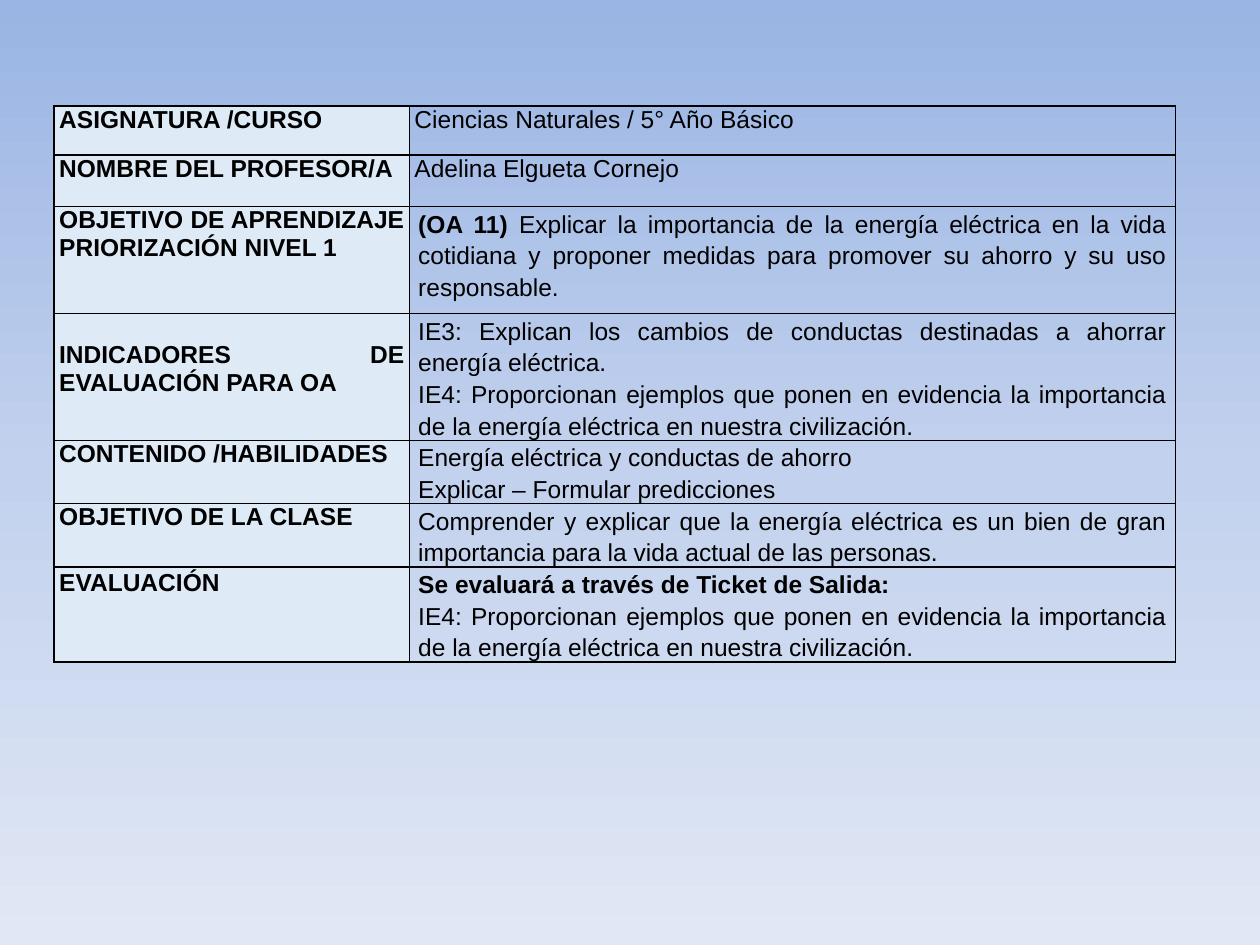
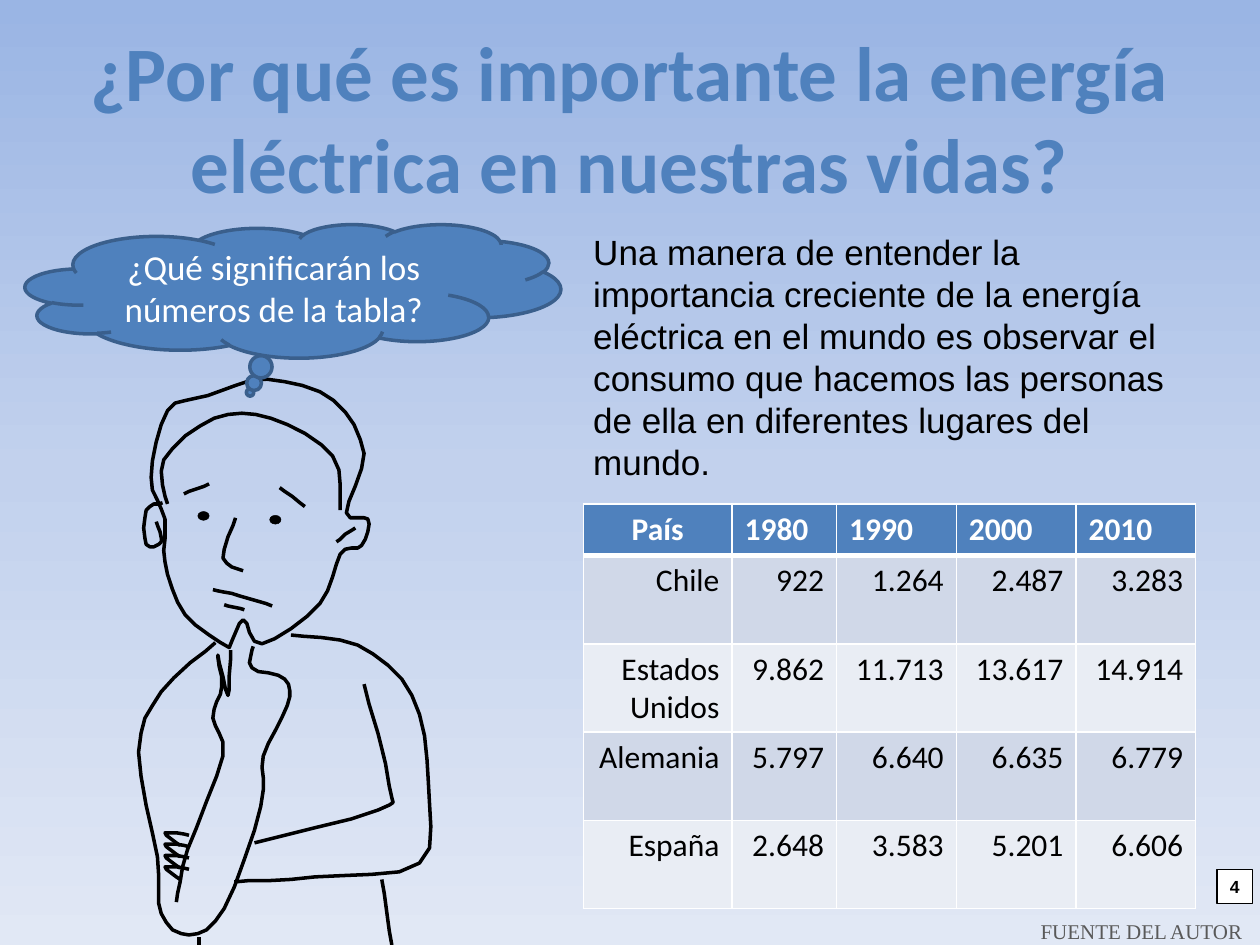
import copy

import pptx
import pptx.dml.color
import pptx.enum.shapes
import pptx.enum.text
import pptx.oxml.ns
import pptx.util
from lxml import etree

# Every length is counted in cells of a 1000 x 750 grid.
CELL = pptx.util.Inches(0.01)
COLUMNS, ROWS = 1000, 750

COLORS = {
    "black": "000000", "white": "FFFFFF", "blue": "4F81BD", "outline": "3A5F8C",
    "label": "DEEAF6", "odd": "D0D8E8", "even": "E9EDF4", "gray": "595959",
    "sky": "9AB5E4", "haze": "C2D1ED", "mist": "E1E8F5",
}
BACKGROUND = ["sky", "haze", "mist"]
ALIGN = pptx.enum.text.PP_ALIGN
MIDDLE = pptx.enum.text.MSO_ANCHOR.MIDDLE
SHAPE = pptx.enum.shapes.MSO_SHAPE

INDICATOR = ("IE4: Proporcionan ejemplos que ponen en evidencia la importancia "
             "de la energía eléctrica en nuestra civilización.")

# label, row height, paragraphs
LESSON = [
    ("ASIGNATURA /CURSO", 39, ["Ciencias Naturales / 5° Año Básico"]),
    ("NOMBRE DEL PROFESOR/A", 41, ["Adelina Elgueta Cornejo"]),
    ("OBJETIVO DE APRENDIZAJE PRIORIZACIÓN NIVEL 1", 85, [
        [("(OA 11) ", True),
         ("Explicar la importancia de la energía eléctrica en la vida cotidiana y proponer "
          "medidas para promover su ahorro y su uso responsable.", False)]]),
    ("INDICADORES DE EVALUACIÓN PARA OA", 100, [
        "IE3: Explican los cambios de conductas destinadas a ahorrar energía eléctrica.",
        INDICATOR]),
    ("CONTENIDO /HABILIDADES", 50, [
        "Energía eléctrica y conductas de ahorro", "Explicar – Formular predicciones"]),
    ("OBJETIVO DE LA CLASE", 50, [
        "Comprender y explicar que la energía eléctrica es un bien de gran importancia "
        "para la vida actual de las personas."]),
    ("EVALUACIÓN", 75, [
        [("Se evaluará a través de Ticket de Salida:", True)], INDICATOR]),
]
SHORT_ROWS = 2
LABEL_TOPS = {"INDICADORES DE EVALUACIÓN PARA OA": 22, "EVALUACIÓN": 2}

TITLE = "¿Por qué es importante la energía eléctrica en nuestras vidas?"
INTRODUCTION = ("Una manera de entender la importancia creciente de la energía eléctrica en el "
                "mundo es observar el consumo que hacemos las personas de ella en diferentes "
                "lugares del mundo.")
QUESTION = "¿Qué significarán los números de la tabla?"
CREDIT = "FUENTE DEL AUTOR"
PAGE_NUMBER = "4"

CONSUMPTION = [
    ("País", "1980", "1990", "2000", "2010"),
    ("Chile", "922", "1.264", "2.487", "3.283"),
    ("Estados Unidos", "9.862", "11.713", "13.617", "14.914"),
    ("Alemania", "5.797", "6.640", "6.635", "6.779"),
    ("España", "2.648", "3.583", "5.201", "6.606"),
]

# Key points of each stroke; smooth() rounds the way between them.
THINKER = {
    "head": [(182, 514), (147, 488), (131, 446), (131, 412), (120, 379), (133, 326), (165, 314),
             (212, 301), (265, 318), (289, 360), (275, 407), (292, 412), (287, 433), (270, 440),
             (254, 479), (208, 511), (193, 492), (182, 514)],
    "hairline": [(270, 405), (264, 362), (215, 332), (170, 332), (130, 365), (133, 400)],
    "left brow": [(166, 384), (146, 392)],
    "right brow": [(242, 402), (222, 387)],
    "nose": [(187, 411), (177, 443), (193, 453)],
    "mouth": [(216, 481), (190, 473), (169, 468)],
    "lower lip": [(194, 484), (178, 480)],
    "left ear": [(129, 399), (116, 405), (116, 432), (128, 430), (124, 414)],
    "right ear": [(282, 419), (267, 430)],
    "raised hand": [(183, 516), (181, 552), (173, 520), (176, 545), (169, 570), (177, 600),
                    (149, 674), (140, 716)],
    "raised arm": [(201, 513), (200, 530), (226, 539), (228, 560), (209, 600), (207, 640),
                   (178, 721), (150, 742), (128, 725), (125, 680), (110, 597), (128, 549),
                   (171, 510)],
    "folded arm": [(231, 504), (284, 512), (327, 552), (340, 620), (333, 685), (250, 696),
                   (186, 700)],
    "inner arm": [(289, 543), (309, 624), (300, 643), (202, 669)],
    "waist": [(303, 698), (311, ROWS)],
}
FINGER = [(150, 663), (131, 661), (143, 671)]
FINGER_COUNT, FINGER_STEP = 4, 9
EYES = [(157, 406), (214, 409)]
HIP = (158, 744, 158, ROWS)


def color_of(name):
    return pptx.dml.color.RGBColor.from_string(COLORS[name])


def on_grid(*counts):
    return [count * CELL for count in counts]


def write(frame, paragraphs, size, font="Arial", color="black", bold=False, align=ALIGN.LEFT,
          spacing=None):
    """Fill a text frame; a paragraph is a string or a list of (text, bold) pairs."""
    for index, content in enumerate(paragraphs):
        para = frame.add_paragraph() if index else frame.paragraphs[0]
        para.alignment = align
        para.line_spacing = spacing
        for text, strong in [(content, bold)] if isinstance(content, str) else content:
            span = para.add_run()
            span.text = text
            span.font.size = pptx.util.Pt(size)
            span.font.name = font
            span.font.bold = strong
            span.font.color.rgb = color_of(color)


def paint(shape, fill=None, line="black", width=2):
    shape.shadow.inherit = False
    if fill:
        shape.fill.solid()
        shape.fill.fore_color.rgb = color_of(fill)
    else:
        shape.fill.background()
    shape.line.color.rgb = color_of(line)
    shape.line.width = pptx.util.Pt(width)


def add_text(page, place, text, wrap=True, anchor=None, **style):
    frame = page.shapes.add_textbox(*on_grid(*place)).text_frame
    frame.word_wrap = wrap
    frame.vertical_anchor = anchor
    write(frame, [text], **style)


def add_labelled_shape(page, kind, place, text, fill, line, width, wrap=True, **style):
    shape = page.shapes.add_shape(kind, *on_grid(*place))
    paint(shape, fill, line, width)
    shape.text_frame.word_wrap = wrap
    shape.text_frame.vertical_anchor = MIDDLE
    write(shape.text_frame, [text], align=ALIGN.CENTER, **style)
    return shape


def add_grid_table(page, left, top, widths, heights):
    table = page.shapes.add_table(len(heights), len(widths),
                                  *on_grid(left, top, sum(widths), sum(heights))).table
    table.first_row = table.horz_banding = False
    for column, width in zip(table.columns, widths):
        column.width = width * CELL
    for row, height in zip(table.rows, heights):
        row.height = height * CELL
    return table


def format_cell(cell, fill, border, margins, bottom=1):
    """Set the borders (points), the fill and the (side, top, bottom) margins."""
    properties = cell._tc.get_or_add_tcPr()
    for side, width in (("L", 1), ("R", 1), ("T", 1), ("B", bottom)):
        edge = etree.SubElement(properties, pptx.oxml.ns.qn(f"a:ln{side}"),
                                w=str(pptx.util.Pt(width)))
        solid = etree.SubElement(edge, pptx.oxml.ns.qn("a:solidFill"))
        etree.SubElement(solid, pptx.oxml.ns.qn("a:srgbClr"), val=COLORS[border])
    if fill:
        cell.fill.solid()
        cell.fill.fore_color.rgb = color_of(fill)
    else:
        cell.fill.background()
    side, cell.margin_top, cell.margin_bottom = on_grid(*margins)
    cell.margin_left = cell.margin_right = side


def set_background(master):
    fill = master.background.fill
    fill.gradient()
    fill.gradient_angle = 270
    stops = master.element.find(".//" + pptx.oxml.ns.qn("p:bg")).find(
        ".//" + pptx.oxml.ns.qn("a:gsLst"))
    stops.append(copy.deepcopy(stops[-1]))
    for index, (stop, shade) in enumerate(zip(fill.gradient_stops, BACKGROUND)):
        stop.position = index / (len(BACKGROUND) - 1)
        stop.color.rgb = color_of(shade)


def smooth(points, steps=4):
    """Return points on a Catmull-Rom curve, bent at half strength, through the key points."""
    padded = [points[0], *points, points[-1]]
    curve = [points[0]]
    for before, start, end, after in zip(padded, padded[1:], padded[2:], padded[3:]):
        for step in range(1, steps + 1):
            t = step / steps
            rise = t * t * (3 - 2 * t)
            leave, arrive = t * (1 - t) ** 2, t * t * (t - 1)
            curve.append(tuple(
                round(a + (b - a) * rise + (leave * (b - p) + arrive * (n - a)) / 2)
                for p, a, b, n in zip(before, start, end, after)))
    return curve


def draw_stroke(group, points):
    curve = smooth(points)
    builder = group.shapes.build_freeform(*curve[0], scale=CELL)
    builder.add_line_segments(curve[1:], close=points[0] == points[-1])
    paint(builder.convert_to_shape())


def draw_thinker(page):
    group = page.shapes.add_group_shape()
    fingers = [[(x, y + index * FINGER_STEP) for x, y in FINGER] for index in range(FINGER_COUNT)]
    for points in [*THINKER.values(), *fingers]:
        draw_stroke(group, points)
    for left, top in EYES:
        eye = group.shapes.add_shape(SHAPE.OVAL, *on_grid(left, top, 9, 7))
        paint(eye, fill="black", width=0.25)
    hip = group.shapes.add_connector(pptx.enum.shapes.MSO_CONNECTOR.STRAIGHT, *on_grid(*HIP))
    hip.line.color.rgb = color_of("black")
    hip.line.width = pptx.util.Pt(2)
    etree.SubElement(hip._element.spPr, pptx.oxml.ns.qn("a:effectLst"))


def build_lesson_page(page):
    table = add_grid_table(page, 43, 84, (282, 608), [height for _, height, _ in LESSON])
    for index, (label, _, details) in enumerate(LESSON):
        name, detail = table.cell(index, 0), table.cell(index, 1)
        short = index < SHORT_ROWS
        format_cell(name, "label", "black", (4, LABEL_TOPS.get(label, 0), 0))
        format_cell(detail, None, "black", (4 if short else 7, 0, 0))
        write(name.text_frame, [label], 14, bold=True, align=ALIGN.JUSTIFY)
        write(detail.text_frame, details, 14, align=ALIGN.JUSTIFY, spacing=1 if short else 1.15)


def build_consumption_table(page):
    table = add_grid_table(page, 463, 400, [118, 83] + [95] * 3, [41] + [70] * 4)
    for row, values in enumerate(CONSUMPTION):
        header = row == 0
        fill = "blue" if header else "odd" if row % 2 else "even"
        for column, value in enumerate(values):
            cell = table.cell(row, column)
            format_cell(cell, fill, "white", (10, 5, 5), bottom=3 if header else 1)
            header_align = ALIGN.LEFT if column else ALIGN.CENTER
            write(cell.text_frame, [value], 18, font="Calibri", bold=header,
                  color="white" if header else "black",
                  align=header_align if header else ALIGN.RIGHT)


def build_question_page(page):
    add_text(page, (50, 30, 900, 125), TITLE, anchor=MIDDLE, size=44, font="Calibri",
             color="blue", bold=True, align=ALIGN.CENTER)
    add_text(page, (461, 178, 489, 212), INTRODUCTION, size=20)
    build_consumption_table(page)
    draw_thinker(page)
    cloud = add_labelled_shape(page, SHAPE.CLOUD_CALLOUT, (20, 178, 425, 106), QUESTION,
                               "blue", "outline", 2, size=20, font="Calibri", color="white")
    cloud.adjustments[0], cloud.adjustments[1] = -0.08, 0.76
    add_text(page, (816, 724, 182, 26), CREDIT, wrap=False, size=12,
             font="Times New Roman", color="gray")
    add_labelled_shape(page, SHAPE.RECTANGLE, (966, 690, 28, 27), PAGE_NUMBER,
                       "white", "black", 0.75, wrap=False, size=10, bold=True)


def main():
    deck = pptx.Presentation()
    deck.slide_width, deck.slide_height = on_grid(COLUMNS, ROWS)
    set_background(deck.slide_master)
    for build_page in (build_lesson_page, build_question_page):
        build_page(deck.slides.add_slide(deck.slide_layouts[6]))
    deck.save("out.pptx")


if __name__ == "__main__":
    main()
